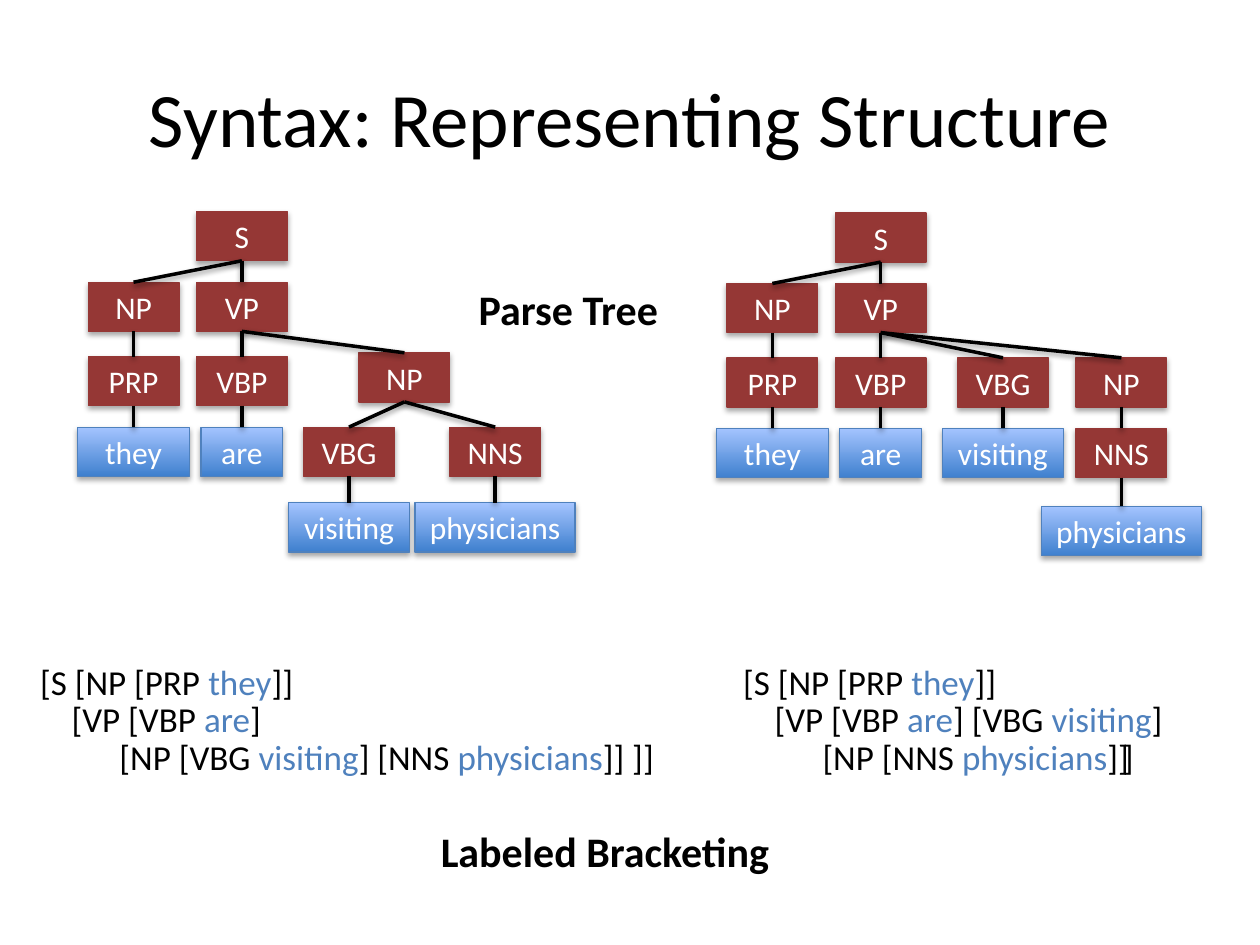
from pptx import Presentation
from pptx.util import Inches, Pt
from pptx.dml.color import RGBColor
from pptx.enum.shapes import MSO_SHAPE, MSO_CONNECTOR
from pptx.enum.text import PP_ALIGN, MSO_ANCHOR
from pptx.oxml import parse_xml
from pptx.oxml.ns import nsdecls
from dataclasses import dataclass


@dataclass(frozen=True)
class Theme:
    font: str = "Calibri"
    ink: str = "000000"
    pale: str = "FFFFFF"
    red: str = "953735"
    blue: str = "4F81BD"
    deep: str = "3F80CE"
    light: str = "A4C4FF"
    title: int = 44
    head: int = 24
    body: int = 20
    node: int = 18
    rim: float = 0.75
    edge: int = 2


theme = Theme()
WIDE, HIGH = 10, 7.5
NODE_W, NODE_H = 0.72, 0.39

TITLE = ("Syntax: Representing Structure", (0.05, 0.04, 0.9, 1 / 6))
HEADS = [("Parse Tree", (0.37, 0.293, 0.173, 0.067)),
         ("Labeled Bracketing", (0.34, 0.867, 0.297, 0.067))]
WORDS = {"they": 0.89, "are": 0.65, "visiting": 0.96, "physicians": 1.27}

TREES = [
    dict(cols=[1.06, 1.92, 2.77, 3.21, 3.93],
         rows=[1.68, 2.24, 2.8, 2.83, 3.39, 3.99],
         nodes=[("S", None, 1, 0), ("NP", 0, 0, 1), ("VP", 0, 1, 1),
                ("PRP", 1, 0, 3), ("VBP", 2, 1, 3), ("NP", 2, 3, 2),
                ("they", 3, 0, 4), ("are", 4, 1, 4),
                ("VBG", 5, 2, 4), ("NNS", 5, 4, 4),
                ("visiting", 8, 2, 5), ("physicians", 9, 4, 5)]),
    dict(cols=[6.13, 6.99, 7.96, 8.9],
         rows=[1.69, 2.25, 2.84, 3.4, 4.02],
         nodes=[("S", None, 1, 0), ("NP", 0, 0, 1), ("VP", 0, 1, 1),
                ("PRP", 1, 0, 2), ("VBP", 2, 1, 2),
                ("VBG", 2, 2, 2), ("NP", 2, 3, 2),
                ("they", 3, 0, 3), ("are", 4, 1, 3),
                ("visiting", 5, 2, 3), ("NNS", 6, 3, 3),
                ("physicians", 10, 3, 4)]),
]

INDENTS = [0, 0.25, 0.63]
TAB = 3.32
BRACKETS = [
    ((0.022, 0.697, 0.51, 0.161),
     [["[S [NP [PRP ", "they", "]]"],
      ["[VP [VBP ", "are", "]"],
      ["[NP [VBG ", "visiting", "] [NNS ", "physicians", "]] ]]"]]),
    ((0.58, 0.697, 0.384, 0.161),
     [["[S [NP [PRP ", "they", "]]"],
      ["[VP [VBP ", "are", "] [VBG ", "visiting", "]"],
      ["[NP [NNS ", "physicians", "]]\t]"]]),
]


def paint(run, size, color, bold=False):
    font = run.font
    font.name, font.size, font.bold = theme.font, Pt(size), bold
    font.color.rgb = RGBColor.from_string(color)


def shade(shape, drop, alpha):
    shape._element.spPr.append(parse_xml(
        f'<a:effectLst {nsdecls("a")}><a:outerShdw blurRad="40000" '
        f'dist="{drop}" dir="5400000" rotWithShape="0"><a:srgbClr '
        f'val="{theme.ink}"><a:alpha val="{alpha}000"/></a:srgbClr>'
        '</a:outerShdw></a:effectLst>'))


def add_box(slide, share):
    x, y, w, h = share
    box = slide.shapes.add_textbox(Inches(x * WIDE), Inches(y * HIGH),
                                   Inches(w * WIDE), Inches(h * HIGH))
    box.text_frame.word_wrap = True
    return box.text_frame


def add_label(slide, text, share, size, bold=False):
    frame = add_box(slide, share)
    frame.text = text
    paint(frame.paragraphs[0].runs[0], size, theme.ink, bold)
    return frame


def add_node(slide, text, mid, top):
    wide = WORDS.get(text, NODE_W)
    node = slide.shapes.add_shape(
        MSO_SHAPE.RECTANGLE, Inches(mid - wide / 2), Inches(top),
        Inches(wide), Inches(NODE_H))
    if text in WORDS:
        node.fill.gradient()
        node.fill.gradient_angle = 90
        for stop, color in zip(node.fill.gradient_stops,
                               (theme.deep, theme.light)):
            stop.color.rgb = RGBColor.from_string(color)
    else:
        node.fill.solid()
        node.fill.fore_color.rgb = RGBColor.from_string(theme.red)
    rim = theme.blue if text in WORDS else theme.red
    node.line.color.rgb = RGBColor.from_string(rim)
    node.line.width = Pt(theme.rim)
    shade(node, 23000, 35)
    frame = node.text_frame
    frame.text = text
    frame.word_wrap = False
    frame.vertical_anchor = MSO_ANCHOR.MIDDLE
    frame.paragraphs[0].alignment = PP_ALIGN.CENTER
    paint(frame.paragraphs[0].runs[0], theme.node, theme.pale)
    return node


def add_edge(slide, top, low):
    edge = slide.shapes.add_connector(MSO_CONNECTOR.STRAIGHT, 0, 0, 0, 0)
    edge.begin_connect(top, 2)
    edge.end_connect(low, 0)
    edge.line.color.rgb = RGBColor.from_string(theme.ink)
    edge.line.width = Pt(theme.edge)
    shade(edge, 20000, 38)


def add_tree(slide, cols, rows, nodes):
    shapes = [add_node(slide, text, cols[col], rows[row])
              for text, _, col, row in nodes]
    for shape, (_, up, _, _) in zip(shapes, nodes):
        if up is not None:
            add_edge(slide, shapes[up], shape)


def add_lines(slide, share, lines):
    frame = add_box(slide, share)
    for i, (parts, indent) in enumerate(zip(lines, INDENTS)):
        para = frame.paragraphs[0] if i == 0 else frame.add_paragraph()
        para.line_spacing = 0.9
        props = para._p.get_or_add_pPr()
        props.set("marL", str(Inches(indent)))
        props.set("indent", "0")
        if "\t" in parts[-1]:
            props.append(parse_xml(
                f'<a:tabLst {nsdecls("a")}><a:tab pos="{Inches(TAB)}" '
                'algn="l"/></a:tabLst>'))
        for part in parts:
            run = para.add_run()
            run.text = part
            paint(run, theme.body, theme.blue if part in WORDS else theme.ink)


def main():
    deck = Presentation()
    deck.slide_width, deck.slide_height = Inches(WIDE), Inches(HIGH)
    slide = deck.slides.add_slide(deck.slide_layouts[6])
    frame = add_label(slide, *TITLE, theme.title)
    frame.vertical_anchor = MSO_ANCHOR.MIDDLE
    frame.paragraphs[0].alignment = PP_ALIGN.CENTER
    for tree in TREES:
        add_tree(slide, **tree)
    for share, lines in BRACKETS:
        add_lines(slide, share, lines)
    for text, share in HEADS:
        add_label(slide, text, share, theme.head, True)
    deck.save("out.pptx")


if __name__ == "__main__":
    main()
